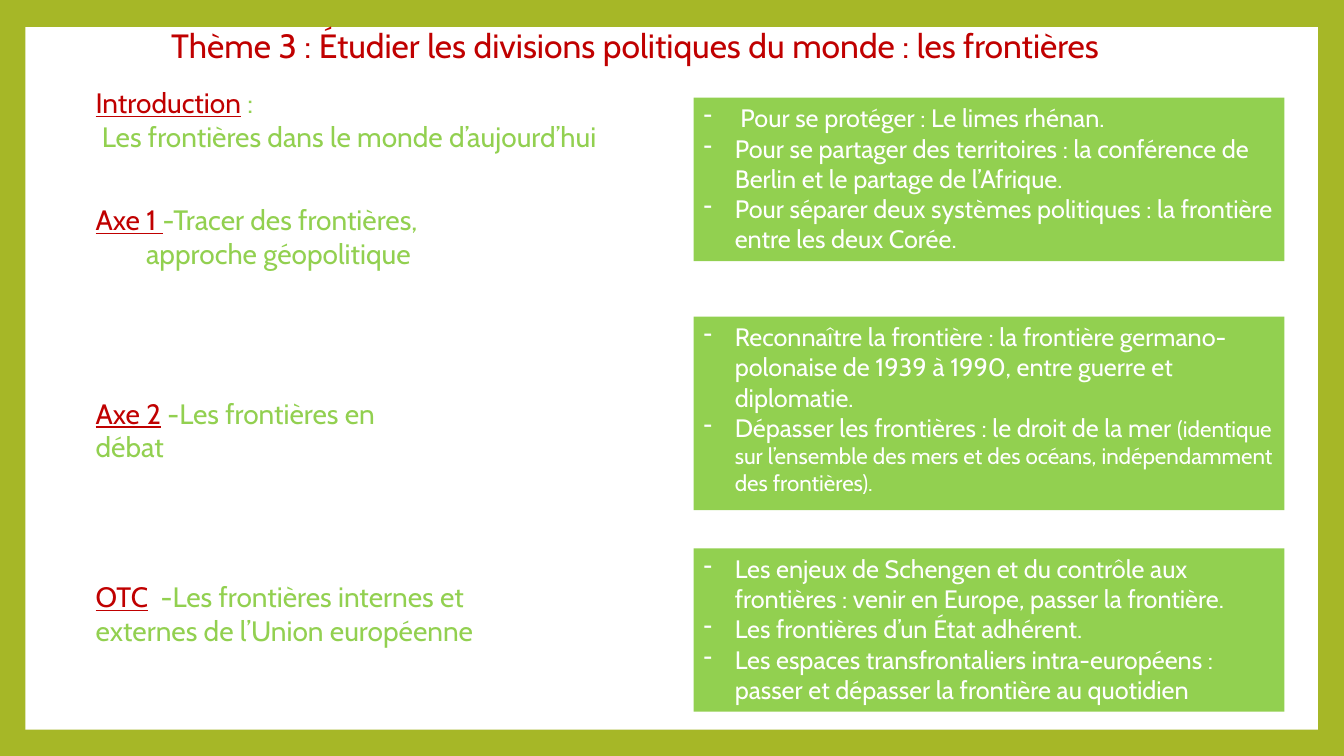
from dataclasses import dataclass

from lxml import etree
from pptx import Presentation
from pptx.dml.color import RGBColor
from pptx.enum.shapes import MSO_SHAPE
from pptx.enum.text import MSO_ANCHOR, PP_ALIGN
from pptx.oxml.ns import qn
from pptx.util import Inches, Pt

RECT = MSO_SHAPE.RECTANGLE
TOP = MSO_ANCHOR.TOP
LEFT = PP_ALIGN.LEFT


@dataclass(frozen=True)
class Theme:
    font: str = "Cabin"
    border: str = "A6B727"
    paper: str = "FFFFFF"
    accent: str = "C00000"
    green: str = "92D050"
    title: int = 24
    heading: int = 20
    body: int = 18
    note: int = 16
    bullet_indent: float = 0.31
    line_indent: float = 0.5


class Deck:
    """Positions and sizes are percentages of the slide's width and height."""

    def __init__(self, theme):
        self.t = theme
        self.prs = Presentation()
        self.prs.slide_width, self.prs.slide_height = Inches(13.33), Inches(7.5)
        self.s = self.prs.slides.add_slide(self.prs.slide_layouts[6])
        fill = self.s.background.fill
        fill.solid()
        fill.fore_color.rgb = RGBColor.from_string(theme.border)

    def area(self, x, y, w, h):
        sw, sh = self.prs.slide_width, self.prs.slide_height
        return [int(v * side / 100) for v, side in ((x, sw), (y, sh), (w, sw), (h, sh))]

    def panel(self, box, color):
        sp = self.s.shapes.add_shape(RECT, *self.area(*box))
        sp.shadow.inherit = False
        sp.fill.solid()
        sp.fill.fore_color.rgb = RGBColor.from_string(color)
        sp.line.fill.background()
        return sp

    def paragraph(self, tf, first):
        tf.word_wrap = True
        tf.vertical_anchor = TOP
        p = tf.paragraphs[0] if first else tf.add_paragraph()
        p.alignment = LEFT
        return p

    def run(self, p, text, size, color, underline=False):
        r = p.add_run()
        r.text = text
        r.font.name = self.t.font
        r.font.size = Pt(size)
        r.font.color.rgb = RGBColor.from_string(color)
        r.font.underline = underline

    def indent(self, p, left, hanging=0):
        pPr = p._p.get_or_add_pPr()
        pPr.set("marL", str(Inches(left)))
        pPr.set("indent", str(-Inches(hanging)))
        return pPr

    def title(self, box, text):
        tf = self.s.shapes.add_textbox(*self.area(*box)).text_frame
        self.run(self.paragraph(tf, True), text, self.t.title, self.t.accent)

    def heading(self, box, label, lines, indented=False):
        """Red underlined label, then green lines; each line is a list of (text, colour)."""
        tf = self.s.shapes.add_textbox(*self.area(*box)).text_frame
        for i, line in enumerate(lines):
            p = self.paragraph(tf, i == 0)
            if i == 0:
                self.run(p, label, self.t.heading, self.t.accent, True)
            elif indented:
                self.indent(p, self.t.line_indent)
            self.run(p, line, self.t.heading, self.t.green)

    def bullets(self, box, items):
        """Each item is a (text, smaller closing note) pair."""
        tf = self.panel(box, self.t.green).text_frame
        for i, (text, note) in enumerate(items):
            p = self.paragraph(tf, i == 0)
            pPr = self.indent(p, self.t.bullet_indent, self.t.bullet_indent)
            etree.SubElement(pPr, qn("a:buChar")).set("char", "-")
            self.run(p, text, self.t.body, self.t.paper)
            if note:
                self.run(p, note, self.t.note, self.t.paper)


# label, lines, top, width, height, indented second line
HEADINGS = [
    ("Introduction", [" :", " Les frontières dans le monde d’aujourd’hui"],
     10.67, 68.42, 10.27, False),
    ("Axe 1 ", ["-Tracer des frontières,", "approche géopolitique"],
     26.13, 43.66, 10.27, True),
    ("Axe 2", [" -Les frontières en débat"], 51.73, 27.4, 5.87, False),
    ("OTC", ["  -Les frontières internes et", "externes de l’Union européenne"],
     76, 35.86, 14.8, False),
]

# top, height, items
PANELS = [
    (12.93, 21.6, [
        (" Pour se protéger : Le limes rhénan.", ""),
        ("Pour se partager des territoires : la conférence de Berlin et le partage "
         "de l’Afrique.", ""),
        ("Pour séparer deux systèmes politiques : la frontière entre les deux Corée.", ""),
    ]),
    (41.87, 25.6, [
        ("Reconnaître la frontière : la frontière germano-polonaise de 1939 à 1990, "
         "entre guerre et diplomatie.", ""),
        ("Dépasser les frontières : le droit de la mer ",
         "(identique sur l’ensemble des mers et des océans, indépendamment "
         "des frontières)."),
    ]),
    (72.53, 21.6, [
        ("Les enjeux de Schengen et du contrôle aux frontières : venir en Europe, "
         "passer la frontière.", ""),
        ("Les frontières d’un État adhérent.", ""),
        ("Les espaces transfrontaliers intra-européens : passer et dépasser la "
         "frontière au quotidien", ""),
    ]),
]
HEADING_X = 6.38
PANEL_X, PANEL_W = 51.61, 43.96


def main():
    deck = Deck(Theme())
    deck.panel((1.88, 3.6, 96.17, 92.93), deck.t.paper)
    for label, lines, y, w, h, indented in HEADINGS:
        deck.heading((HEADING_X, y, w, h), label, lines, indented)
    for y, h, items in PANELS:
        deck.bullets((PANEL_X, y, PANEL_W, h), items)
    deck.title((12, 2.67, 76.07, 6.67),
               "Thème 3 : Étudier les divisions politiques du monde : les frontières")
    deck.prs.save("out.pptx")


if __name__ == "__main__":
    main()
